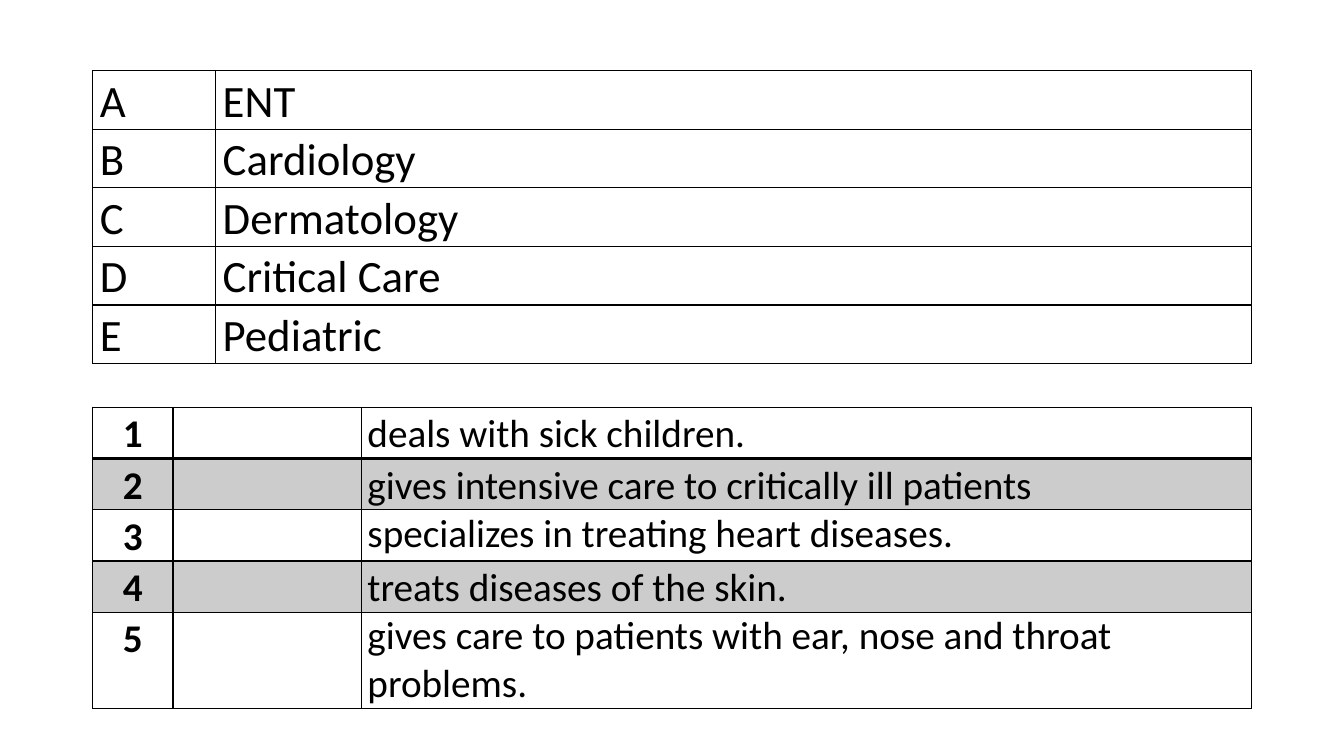
from lxml import etree
from pptx import Presentation
from pptx.dml.color import RGBColor
from pptx.enum import text
from pptx.oxml import ns
from pptx.util import Pt

# Content
DEPARTMENTS = [
    ("A", "ENT"),
    ("B", "Cardiology\u00a0"),
    ("C", "Dermatology\u00a0"),
    ("D", "Critical Care"),
    ("E", "Pediatric"),
]
DUTIES = [
    ("1", "", "deals with sick children."),
    ("2", "", "gives intensive care to critically ill patients"),
    ("3", "", "specializes in treating heart diseases."),
    ("4", "", "treats diseases of the skin."),
    ("5", "", "gives care to patients with ear, nose and throat problems."),
]
TIGHT_TEXTS = (DUTIES[2][2], DUTIES[4][2])  # single line spacing

# Layout in points
LEFT = 66.24
BLACK = "000000"
TABLES = [
    dict(rows=DEPARTMENTS, top=50.4, widths=(87.84, 740.16), heights=[39.6] * 5,
         size=32, inset=5.04, numbered=False),
    dict(rows=DUTIES, top=290.88, widths=(57.4, 134.4, 636.2),
         heights=[36.55] * 4 + [68.4], size=28, inset=4.5, numbered=True),
]


def color(value):
    return RGBColor.from_string(value)


def add_borders(cell, widths):
    tcPr = cell._tc.get_or_add_tcPr()
    for side, width in widths.items():
        ln = etree.SubElement(tcPr, ns.qn("a:ln" + side), w=str(Pt(width)))
        fill = etree.SubElement(ln, ns.qn("a:solidFill"))
        etree.SubElement(fill, ns.qn("a:srgbClr"), val=BLACK)


def shade(cell, shaded):
    if not shaded:
        cell.fill.background()
        return
    cell.fill.solid()
    cell.fill.fore_color.rgb = color(BLACK)
    clr = cell._tc.tcPr.find(".//" + ns.qn("a:solidFill") + "[last()]/..")
    clr = cell._tc.tcPr.findall(ns.qn("a:solidFill"))[-1][0]
    etree.SubElement(clr, ns.qn("a:alpha"), val="20000")


def write(cell, words, size, inset, bold_center):
    margins = dict(margin_left=Pt(inset), margin_right=Pt(inset),
                   margin_top=0, margin_bottom=0)
    for name, value in margins.items():
        setattr(cell, name, value)
    if not words:
        return
    p = cell.text_frame.paragraphs[0]
    spacing = dict(space_before=Pt(6), space_after=Pt(6),
                   line_spacing=1.0 if words in TIGHT_TEXTS else 1.07)
    for name, value in spacing.items():
        setattr(p, name, value)
    if bold_center:
        p.alignment = text.PP_ALIGN.CENTER
    r = p.add_run()
    r.text = words
    for name, value in dict(name="Calibri", size=Pt(size), bold=bold_center).items():
        setattr(r.font, name, value)
    r.font.color.rgb = color(BLACK)


def build_table(slide, rows, top, widths, heights, size, inset, numbered):
    table = slide.shapes.add_table(len(rows), len(widths), Pt(LEFT), Pt(top),
                                   Pt(sum(widths)), Pt(sum(heights))).table
    table.first_row = table.horz_banding = False
    for column, width in zip(table.columns, widths):
        column.width = Pt(width)
    for i, (row, height) in enumerate(zip(rows, heights)):
        table.rows[i].height = Pt(height)
        for j, words in enumerate(row):
            cell = table.cell(i, j)
            # A heavier rule separates the first numbered row
            add_borders(cell, dict(L=1, R=1, T=2 if numbered and i == 1 else 1,
                                   B=2 if numbered and i == 0 else 1))
            shade(cell, numbered and i % 2 == 1)
            write(cell, words, size, inset, numbered and j == 0)


def main():
    prs = Presentation()
    prs.slide_width, prs.slide_height = Pt(960), Pt(540)
    slide = prs.slides.add_slide(prs.slide_layouts[6])
    for table in TABLES:
        build_table(slide, **table)
    prs.save("out.pptx")


if __name__ == "__main__":
    main()
